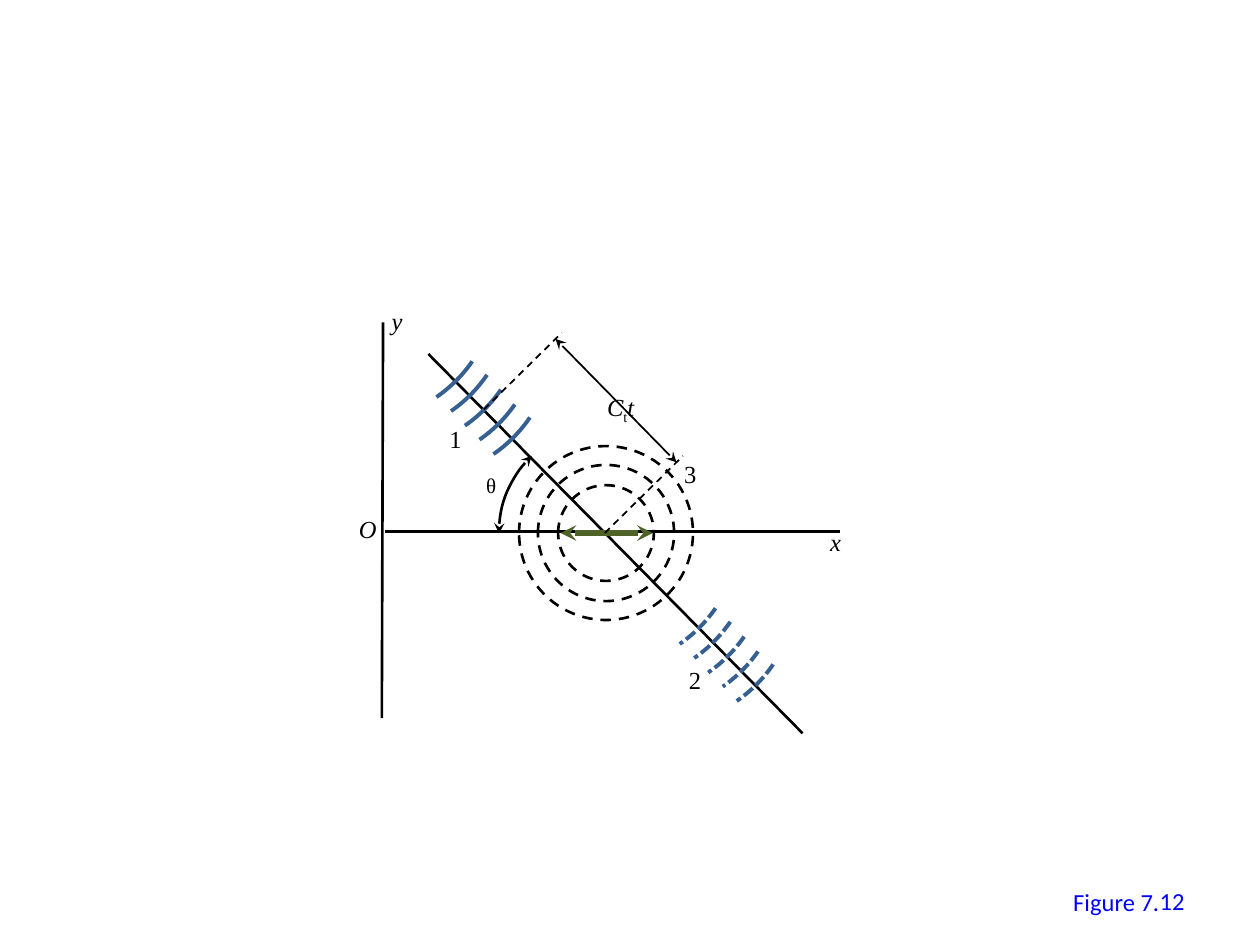
"""Draw Figure 7.12: wave packets and ring waves around a source on the x axis."""
import pptx
import pptx.util
import pptx.dml.color
import pptx.enum.dml
import pptx.enum.shapes
import pptx.enum.text
import pptx.oxml

Pt = pptx.util.Pt
KIND = pptx.enum.shapes.MSO_SHAPE
DASH = pptx.enum.dml.MSO_LINE
COLORS = {"ink": "000000", "wave": "376092", "source": "4F6228", "title": "0000FF"}
SERIF, SANS = "Times New Roman", "Calibri"

AXES = [
    (220.3, 303.8, 480.2, 303.8, "ink", 1.5, None, False),
    (218.2, 410.4, 218.9, 184.3, "ink", 1.5, None, False),
    (244.8, 202.3, 458.6, 419, "ink", 1.5, None, False),
    (320.4, 304.6, 373, 304.6, "source", 3, None, True),
]
GUIDES = [
    (345.6, 304.6, 390.2, 260.6, "ink", 1, DASH.DASH, False),
    (276.5, 234, 321.1, 190.1, "ink", 1, DASH.DASH, False),
    (386.6, 264.2, 317.5, 193.7, "ink", 1, None, True),
]
CENTER = (346.3, 304.6)
RINGS = [99.4, 77.8, 54.7]
ANGLE = (122.4, (107.85, 135.65))
PACKETS = [(262, 221, DASH.SQUARE_DOT), (123, 79.9, None)]
WAVE, STEP = 161.3, 8.15
SWEEPS = [(20.85, 33.24), (20.64, 33.15), (20.8, 33.25), (20.96, 33.17), (20.59, 33.24)]
LABELS = [
    (606.2, 503.3, 64.1, 24.2, [("Figure 7.", "")], 14, SANS, "title"),
    (216.7, 171.4, 24.5, 24.2, [("y", "i")], 14, SERIF, "ink"),
    (198, 290.2, 28.8, 24.2, [("O", "i")], 14, SERIF, "ink"),
    (467.3, 297.4, 24.5, 24.2, [("x", "i")], 14, SERIF, "ink"),
    (270.7, 266.4, 23.8, 21.8, [("θ", "")], 12, SERIF, "ink"),
    (249.8, 239, 21.6, 24.2, [("1", "")], 14, SERIF, "ink"),
    (383.8, 258.5, 21.6, 24.2, [("3", "")], 14, SERIF, "ink"),
    (386.6, 376.6, 21.6, 24.2, [("2", "")], 14, SERIF, "ink"),
    (339.8, 220.3, 35.3, 24.2, [("C", "i"), ("t", "sub"), ("t", "i")], 14, SERIF, "ink"),
]
NUMBER = (516.2, 500.4, 167.8, 28.8, [("12", "")], 14, SANS, "title")


def add_tag(parent, tag):
    return pptx.oxml.ns and parent.makeelement(pptx.oxml.ns.qn(tag), {})


def style(shape, color, width, dash=None, arrows=False):
    shape.line.color.rgb = pptx.dml.color.RGBColor.from_string(COLORS[color])
    shape.line.width = Pt(width)
    if dash:
        shape.line.dash_style = dash
    if arrows:
        props = shape.line._get_or_add_ln()
        for tag in ("a:headEnd", "a:tailEnd"):
            end = add_tag(props, tag)
            end.set("type", "stealth")
            props.append(end)


def draw_line(slide, x1, y1, x2, y2, *look):
    kind = pptx.enum.shapes.MSO_CONNECTOR.STRAIGHT
    line = slide.shapes.add_connector(kind, Pt(x1), Pt(y1), Pt(x2), Pt(y2))
    style(line, *look)
    props = line._element.spPr
    props.append(add_tag(props, "a:effectLst"))


def draw_round(shapes, kind, left, top, size, *look, sweep=()):
    shape = shapes.add_shape(kind, Pt(left), Pt(top), Pt(size), Pt(size))
    shape.shadow.inherit = False
    shape.fill.background()
    for index, value in enumerate(sweep):
        shape.adjustments[index] = value
    style(shape, *look)


def draw_text(slide, left, top, width, height, parts, size, face, color, wrap=False):
    box = slide.shapes.add_textbox(Pt(left), Pt(top), Pt(width), Pt(height))
    frame = box.text_frame
    frame.word_wrap = wrap
    if not wrap:
        frame.auto_size = pptx.enum.text.MSO_AUTO_SIZE.SHAPE_TO_FIT_TEXT
    for text, form in parts:
        run = frame.paragraphs[0].add_run()
        run.text = text
        font = run.font
        font.size, font.name, font.italic = Pt(size), face, form == "i"
        font.color.rgb = pptx.dml.color.RGBColor.from_string(COLORS[color])
        if form == "sub":
            font._element.set("baseline", "-25000")
    return frame


def main():
    deck = pptx.Presentation()
    deck.slide_width, deck.slide_height = Pt(720), Pt(540)
    slide = deck.slides.add_slide(deck.slide_layouts[6])
    for axis in AXES:
        draw_line(slide, *axis)
    mid_x, mid_y = CENTER
    for size in RINGS:
        draw_round(slide.shapes, KIND.OVAL, mid_x - size / 2, mid_y - size / 2, size,
                   "ink", 1.5, DASH.DASH)
    for left, top, dash in PACKETS:
        group = slide.shapes.add_group_shape()
        for index, sweep in enumerate(SWEEPS):
            draw_round(group.shapes, KIND.ARC, left + index * STEP, top + index * STEP,
                       WAVE, "wave", 2.25, dash, sweep=sweep)
    for guide in GUIDES:
        draw_line(slide, *guide)
    size, sweep = ANGLE
    draw_round(slide.shapes, KIND.ARC, mid_x - size / 2, mid_y - size / 2, size,
               "ink", 1.5, None, True, sweep=sweep)
    for label in LABELS:
        draw_text(slide, *label)
    frame = draw_text(slide, *NUMBER, wrap=True)
    frame.vertical_anchor = pptx.enum.text.MSO_ANCHOR.MIDDLE
    frame.paragraphs[0].alignment = pptx.enum.text.PP_ALIGN.RIGHT
    deck.save("out.pptx")


if __name__ == "__main__":
    main()
